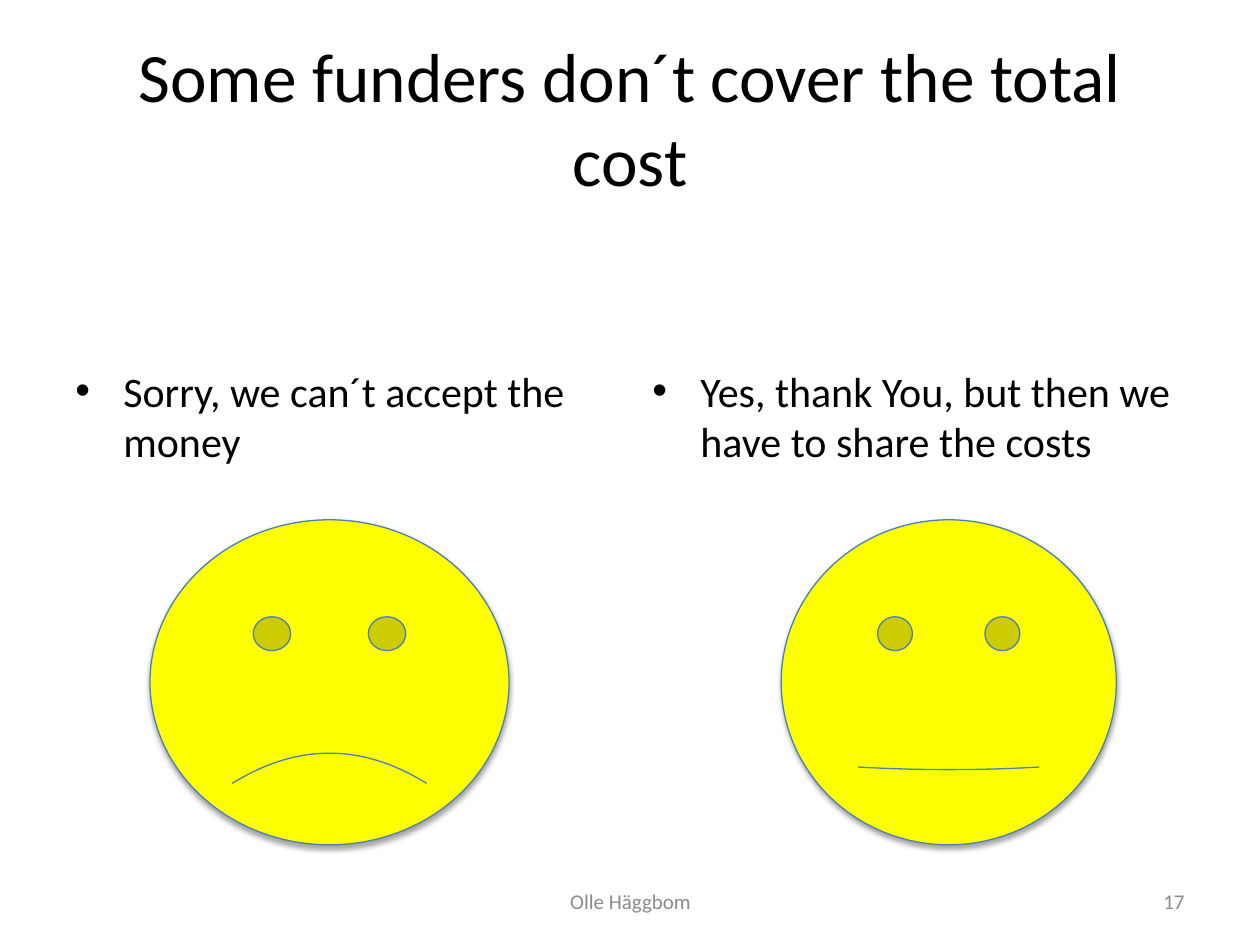
from dataclasses import dataclass

from lxml import etree
from pptx import Presentation
from pptx import util as u
from pptx.dml.color import RGBColor
from pptx.enum import shapes, text
from pptx.oxml.ns import qn

WIDTH, HEIGHT = u.Inches(10), u.Inches(7.5)
COLORS = {"ink": "000000", "muted": "8C8C8C", "face": "FFFF00", "outline": "4B7EBC"}
FONT = "Calibri"
MARGIN = 0.05
HANGING = u.Inches(0.38)
FACE_TOP, FACE_HEIGHT = 0.55, 0.344


@dataclass
class Area:
    """A rectangle given as shares of the slide's width and height."""
    left: float
    top: float
    width: float
    height: float

    def lengths(self) -> tuple[int, int, int, int]:
        return (round(self.left * WIDTH), round(self.top * HEIGHT),
                round(self.width * WIDTH), round(self.height * HEIGHT))


@dataclass
class Label:
    words: str
    area: Area
    size: float
    color: str = "ink"
    align: text.PP_ALIGN = text.PP_ALIGN.LEFT
    anchor: text.MSO_ANCHOR = text.MSO_ANCHOR.MIDDLE
    bullet: bool = False


@dataclass
class Reply:
    """One answer to the funder, with the face that goes with it."""
    words: str
    column: float
    face_left: float
    face_width: float
    smile: float


LABELS = [
    Label("Some funders don´t cover the total cost", Area(MARGIN, 0.04, 0.9, 0.167),
          39.6, align=text.PP_ALIGN.CENTER),
    Label("Olle Häggbom", Area(0.342, 0.927, 0.317, 0.053), 12, "muted",
          text.PP_ALIGN.CENTER),
    Label("17", Area(0.717, 0.927, 0.233, 0.053), 12, "muted", text.PP_ALIGN.RIGHT),
]
REPLIES = [
    Reply("Sorry, we can´t accept the money", MARGIN, 0.119, 0.285, -0.047),
    Reply("Yes, thank You, but then we have to share the costs", 0.508, 0.62, 0.266, 0.004),
]


def rgb(name: str) -> RGBColor:
    return RGBColor.from_string(COLORS[name])


def add_bullet(paragraph) -> None:
    properties = paragraph._p.get_or_add_pPr()
    properties.set("marL", str(HANGING))
    properties.set("indent", str(-HANGING))
    etree.SubElement(properties, qn("a:buFont"), typeface="Arial")
    etree.SubElement(properties, qn("a:buChar"), char="•")


def add_label(slide, label: Label) -> None:
    frame = slide.shapes.add_textbox(*label.area.lengths()).text_frame
    frame.word_wrap = True
    frame.vertical_anchor = label.anchor
    paragraph = frame.paragraphs[0]
    paragraph.alignment = label.align
    if label.bullet:
        add_bullet(paragraph)
    run = paragraph.add_run()
    run.text = label.words
    run.font.name = FONT
    run.font.size = u.Pt(label.size)
    run.font.color.rgb = rgb(label.color)


def add_soft_shadow(shape) -> None:
    shape.shadow.inherit = False
    effects = shape._element.spPr.find(qn("a:effectLst"))
    shadow = etree.SubElement(effects, qn("a:outerShdw"), blurRad=str(u.Pt(3.1)),
                              dist=str(u.Pt(1.8)), dir="5400000", rotWithShape="0")
    color = etree.SubElement(shadow, qn("a:srgbClr"), val=COLORS["ink"])
    etree.SubElement(color, qn("a:alpha"), val="35000")


def add_reply(slide, reply: Reply) -> None:
    add_label(slide, Label(reply.words, Area(reply.column, 0.38, 0.442, 0.15), 24,
                           anchor=text.MSO_ANCHOR.TOP, bullet=True))
    area = Area(reply.face_left, FACE_TOP, reply.face_width, FACE_HEIGHT)
    face = slide.shapes.add_shape(shapes.MSO_SHAPE.SMILEY_FACE, *area.lengths())
    face.adjustments[0] = reply.smile
    face.fill.solid()
    face.fill.fore_color.rgb = rgb("face")
    face.line.color.rgb = rgb("outline")
    face.line.width = u.Pt(0.75)
    add_soft_shadow(face)


def main() -> None:
    deck = Presentation()
    deck.slide_width, deck.slide_height = WIDTH, HEIGHT
    slide = deck.slides.add_slide(deck.slide_layouts[6])
    for label in LABELS:
        add_label(slide, label)
    for reply in REPLIES:
        add_reply(slide, reply)
    deck.save("out.pptx")


if __name__ == "__main__":
    main()
